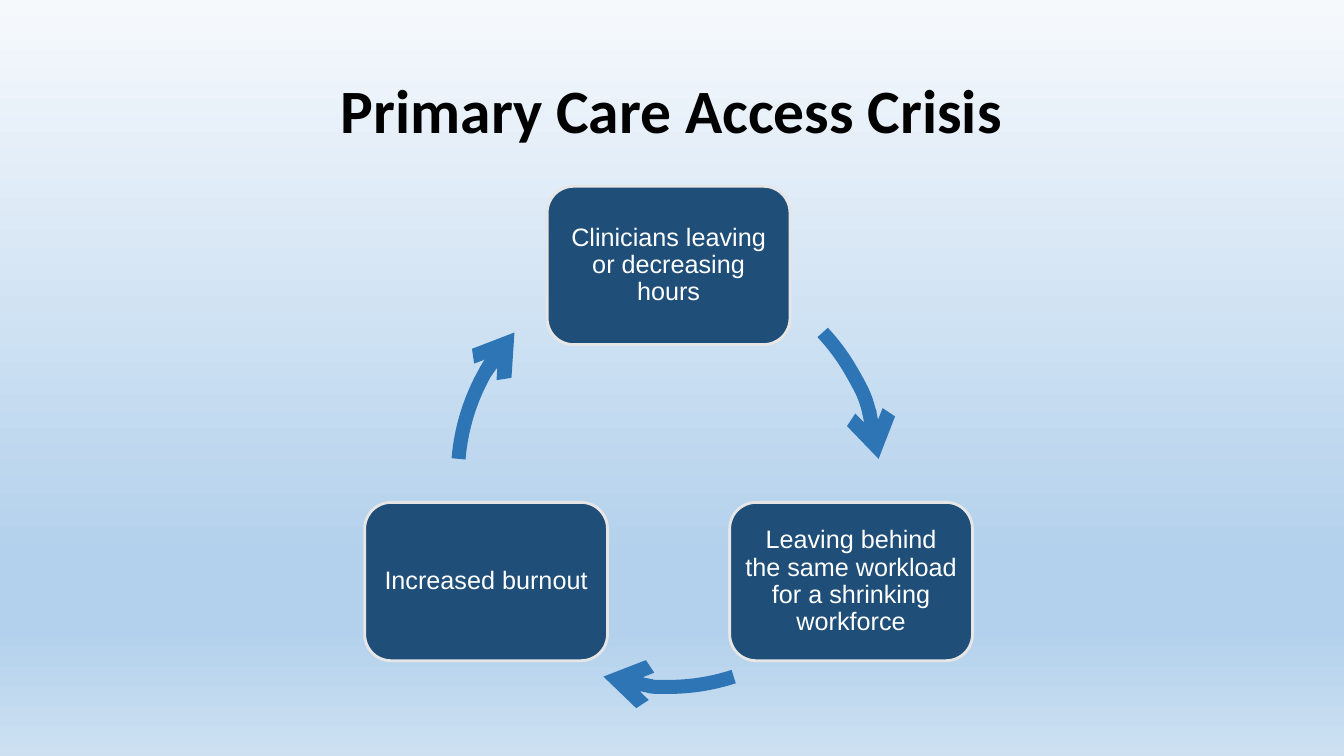
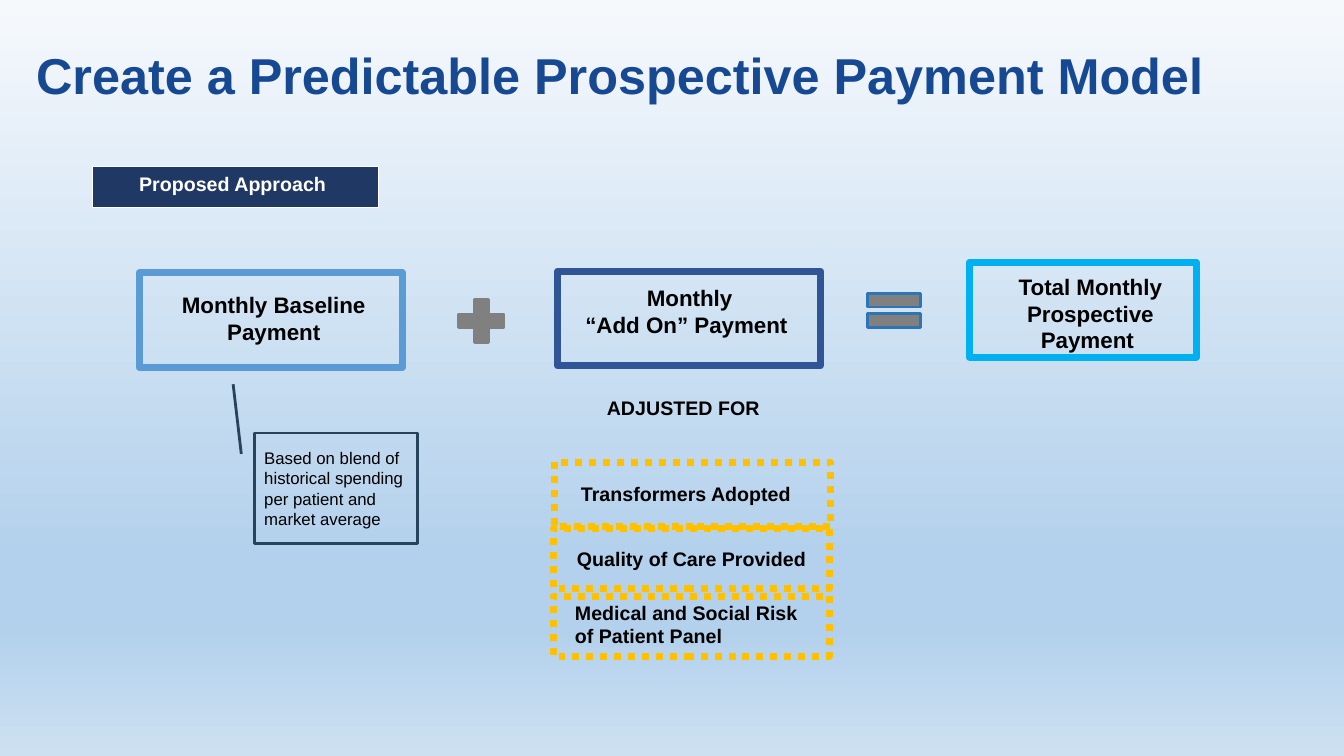
"""Build two slides on the primary care access crisis and a payment model."""
import math

import pptx
import pptx.dml.color
import pptx.enum.dml
import pptx.enum.shapes
import pptx.enum.text
import pptx.oxml.ns
import pptx.util
from lxml import etree

Cm = pptx.util.Cm
Pt = pptx.util.Pt
RGBColor = pptx.dml.color.RGBColor
SHAPE = pptx.enum.shapes.MSO_SHAPE
ALIGN = pptx.enum.text.PP_ALIGN
ANCHOR = pptx.enum.text.MSO_ANCHOR
qn = pptx.oxml.ns.qn

BLACK = RGBColor(0x00, 0x00, 0x00)
WHITE = RGBColor(0xFF, 0xFF, 0xFF)
NODE_BLUE = RGBColor(0x1F, 0x4E, 0x79)
NODE_EDGE = RGBColor(0xE7, 0xE6, 0xE6)
ARROW_BLUE = RGBColor(0x2E, 0x75, 0xB6)
TITLE_BLUE = RGBColor(0x17, 0x49, 0x93)
BASELINE_BLUE = RGBColor(0x5B, 0x9B, 0xD5)
ADD_ON_BLUE = RGBColor(0x2F, 0x55, 0x97)
TOTAL_BLUE = RGBColor(0x00, 0xB0, 0xF0)
TAG_NAVY = RGBColor(0x20, 0x38, 0x64)
NOTE_NAVY = RGBColor(0x28, 0x44, 0x5D)
FACTOR_GOLD = RGBColor(0xFF, 0xC0, 0x00)
SIGN_GREY = RGBColor(0x80, 0x80, 0x80)
SKY_STOPS = (
    (0, RGBColor(0xF6, 0xF9, 0xFC)),
    (74, RGBColor(0xB3, 0xD1, 0xEC)),
    (83, RGBColor(0xB3, 0xD1, 0xEC)),
    (100, RGBColor(0xCC, 0xE0, 0xF2)),
)

BODY_FONT = "Arial"
INSETS = (0.25, 0.13, 0.25, 0.13)
CYCLE_CENTRE = (16.85, 12.0)
CYCLE_RADIUS = 5.31
NODE_SIZE = (6.12, 3.99)
ADJUSTMENT_PER_DEGREE = 0.6


def paint_background(master):
    """Give every slide the sky gradient."""
    fill = master.background.fill
    fill.gradient()
    fill.gradient_angle = 270
    stops = master.element.find(".//" + qn("p:bg")).find(".//" + qn("a:gsLst"))
    for stop in list(stops):
        stops.remove(stop)
    for percent, colour in SKY_STOPS:
        stop = etree.SubElement(stops, qn("a:gs"), pos=str(percent * 1000))
        etree.SubElement(stop, qn("a:srgbClr"), val=str(colour))


def write(shape, text, size, colour=BLACK, bold=False, align=ALIGN.CENTER,
          anchor=ANCHOR.MIDDLE, insets=INSETS, font=BODY_FONT, spacing=None):
    """Fill a shape with text, one paragraph per line."""
    frame = shape.text_frame
    frame.text = text
    frame.word_wrap = True
    frame.vertical_anchor = anchor
    (frame.margin_left, frame.margin_top,
     frame.margin_right, frame.margin_bottom) = map(Cm, insets)
    for paragraph in frame.paragraphs:
        paragraph.alignment = align
        paragraph.line_spacing = spacing
        paragraph.font.name = font
        paragraph.font.size = Pt(size)
        paragraph.font.bold = bold
        paragraph.font.color.rgb = colour


def add_label(slide, box, text, size, **style):
    """Add a bold text box."""
    label = slide.shapes.add_textbox(*map(Cm, box))
    write(label, text, size, bold=True, **style)


def add_block(slide, kind, box, edge, width, fill=None):
    """Add a preset shape with its line and fill and no shadow."""
    block = slide.shapes.add_shape(kind, *map(Cm, box))
    block.shadow.inherit = False
    block.line.color.rgb = edge
    block.line.width = Pt(width)
    if fill is None:
        block.fill.background()
    else:
        block.fill.solid()
        block.fill.fore_color.rgb = fill
    return block


def add_cycle_node(slide, degrees, text):
    """Add a rounded box centred on the cycle, clockwise from the right."""
    angle = math.radians(degrees)
    x = CYCLE_CENTRE[0] + CYCLE_RADIUS * math.cos(angle)
    y = CYCLE_CENTRE[1] + CYCLE_RADIUS * math.sin(angle)
    width, height = NODE_SIZE
    node = add_block(slide, SHAPE.ROUNDED_RECTANGLE,
                     (x - width / 2, y - height / 2, width, height),
                     NODE_EDGE, 2, NODE_BLUE)
    write(node, text, 18, WHITE, insets=(0.2,) * 4, spacing=0.9)


def add_cycle_arrow(slide, start, end):
    """Add an arc with an arrowhead along the cycle."""
    x, y = CYCLE_CENTRE
    arc = add_block(slide, SHAPE.ARC,
                    (x - CYCLE_RADIUS, y - CYCLE_RADIUS,
                     2 * CYCLE_RADIUS, 2 * CYCLE_RADIUS), ARROW_BLUE, 10)
    for index, degrees in enumerate((start, end)):
        arc.adjustments[index] = degrees * ADJUSTMENT_PER_DEGREE
    line = arc.element.find(".//" + qn("a:ln"))
    etree.SubElement(line, qn("a:tailEnd"), type="arrow")


def add_payment(slide, box, edge, text, insets):
    """Add an outlined term of the payment equation."""
    payment = add_block(slide, SHAPE.RECTANGLE, box, edge, 5)
    write(payment, text, 16, bold=True, insets=insets)


def add_factor(slide, box, text, indent, lift=0):
    """Add a dotted adjustment factor."""
    factor = add_block(slide, SHAPE.RECTANGLE, box, FACTOR_GOLD, 5)
    factor.line.dash_style = pptx.enum.dml.MSO_LINE.ROUND_DOT
    write(factor, text, 14, bold=True, align=ALIGN.LEFT,
          insets=(indent, 0, 0.48, lift))


def build_crisis(slide):
    """Draw the cycle of clinicians leaving."""
    add_label(slide, (2.33, 1.02, 29.21, 3.68), "Primary Care Access Crisis",
              44, font="Calibri", spacing=0.9)
    stages = (
        (-90, "Clinicians leaving or decreasing hours", 317, 355.3),
        (30, "Leaving behind the same workload for a shrinking workforce", 72, 108),
        (150, "Increased burnout", 184.7, 223),
    )
    for degrees, text, start, end in stages:
        add_cycle_node(slide, degrees, text)
        add_cycle_arrow(slide, start, end)


def build_payment_model(slide):
    """Draw the payment equation and its adjustments."""
    add_label(slide, (0.66, 0.53, 31.65, 2.87),
              "Create a Predictable Prospective Payment Model", 36,
              colour=TITLE_BLUE, align=ALIGN.LEFT, spacing=0.9)
    approach = add_block(slide, SHAPE.RECTANGLE, (2.34, 4.2, 7.21, 1.02),
                         WHITE, 0.75, TAG_NAVY)
    write(approach, "Proposed Approach", 14, WHITE, bold=True,
          anchor=ANCHOR.TOP, insets=(0.25, 0.13, 0.41, 0.13))

    add_payment(slide, (3.51, 6.87, 6.63, 2.39), BASELINE_BLUE,
                "Monthly Baseline Payment", (0.25, 0, 0.1, 0.1))
    add_block(slide, SHAPE.MATH_PLUS, (11.36, 7.35, 1.55, 1.47),
              SIGN_GREY, 2, SIGN_GREY)
    add_payment(slide, (14.05, 6.83, 6.63, 2.39), ADD_ON_BLUE,
                "Monthly\n“Add On” Payment ", (0.69, 0, 0.66, 0.36))
    add_block(slide, SHAPE.MATH_EQUAL, (21.63, 7.09, 1.8, 1.47),
              ARROW_BLUE, 2, SIGN_GREY)
    add_payment(slide, (24.43, 6.61, 5.72, 2.39), TOTAL_BLUE,
                "Total Monthly Prospective Payment ", (1.1, 0.17, 0.72, 0))

    basis = add_block(slide, SHAPE.LINE_CALLOUT_1, (6.41, 10.91, 4.11, 2.79),
                      NOTE_NAVY, 2)
    for index, value in enumerate((0.19, -0.08, -0.44, -0.13)):
        basis.adjustments[index] = value
    write(basis, "Based on blend of historical spending per patient and market average",
          12, align=ALIGN.LEFT)

    add_label(slide, (14.07, 9.85, 6.3, 0.86), "ADJUSTED FOR", 14)
    add_factor(slide, (13.98, 11.65, 6.96, 1.63), "Transformers Adopted", 0.66, 0.03)
    add_factor(slide, (13.94, 13.31, 6.96, 1.52), "Quality of Care Provided", 0.6)
    add_factor(slide, (13.94, 15.02, 6.96, 1.52),
               "Medical and Social Risk of Patient Panel", 0.55, 0.1)


def main():
    """Build and save the presentation."""
    deck = pptx.Presentation()
    deck.slide_width, deck.slide_height = Cm(33.87), Cm(19.05)
    paint_background(deck.slide_master)
    blank = deck.slide_layouts[6]
    for build in (build_crisis, build_payment_model):
        build(deck.slides.add_slide(blank))
    deck.save("out.pptx")


if __name__ == "__main__":
    main()
